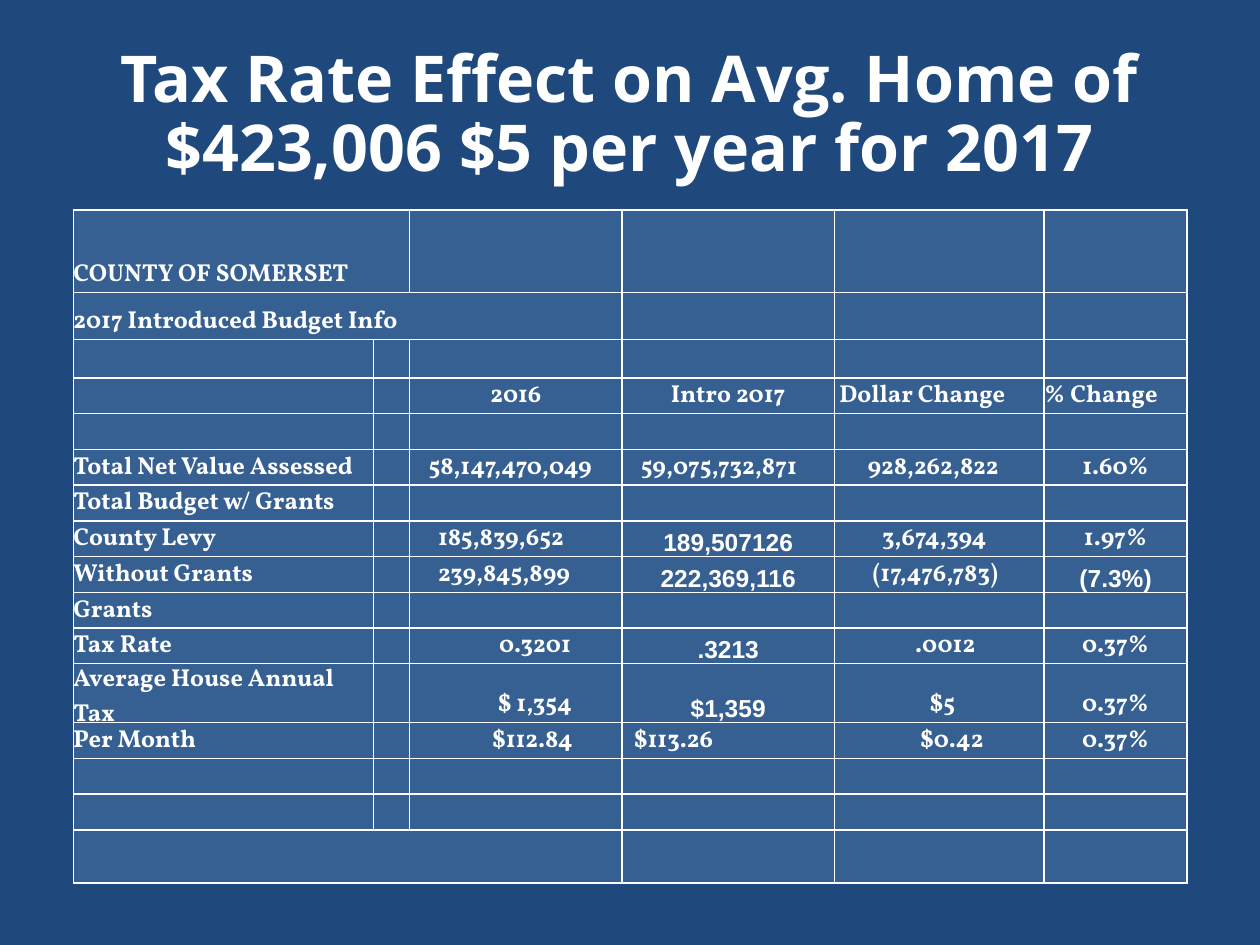
from collections import namedtuple

from lxml import etree
from pptx import Presentation
from pptx.dml.color import RGBColor
from pptx.enum.text import MSO_ANCHOR, PP_ALIGN
from pptx.oxml.ns import qn
from pptx.util import Cm, Pt

LEFT, CENTER = PP_ALIGN.LEFT, PP_ALIGN.CENTER
MIDDLE, BOTTOM = MSO_ANCHOR.MIDDLE, MSO_ANCHOR.BOTTOM

COLORS = {"background": "1F497D", "cell": "376092", "text": "FFFFFF", "border": "FFFFFF"}
TITLE_FONT, TABLE_FONT, UPDATE_FONT = "Open Sans", "Vollkorn", "Arial"
TITLE_SIZE, TABLE_SIZE = Pt(36.9), Pt(14)
BORDER_WIDTH = Pt(1)

TITLE = "Tax Rate Effect on Avg. Home of $423,006 $5 per year for 2017"

Entry = namedtuple("Entry", "text align indent font", defaults=(LEFT, 0, TABLE_FONT))


def centered(text, indent=0):
    return Entry(text, CENTER, indent)


def updated(text):
    """A figure revised after the first draft, set in the second typeface."""
    return Entry(text, CENTER, 0, UPDATE_FONT)


EMPTY = Entry("")
BLANK_ROW = [EMPTY] * 5

# Label, 2016, 2017, dollar change, percent change; the narrow second column stays empty.
ROWS = [
    [Entry("COUNTY OF SOMERSET")] + [EMPTY] * 4,
    [Entry("2017 Introduced Budget Info")] + [EMPTY] * 4,
    BLANK_ROW,
    [EMPTY, centered("2016"), centered("Intro 2017"), Entry("Dollar Change", LEFT, 0.1), Entry("% Change")],
    BLANK_ROW,
    [Entry("Total Net Value Assessed"), Entry("58,147,470,049", LEFT, 0.38),
     Entry("59,075,732,871", LEFT, 0.38), Entry("928,262,822", LEFT, 0.67), centered("1.60%")],
    [Entry("Total Budget w/ Grants")] + [EMPTY] * 4,
    [Entry("County Levy"), Entry("185,839,652", LEFT, 0.57), updated("189,507126"),
     Entry("3,674,394", LEFT, 0.96), centered("1.97%")],
    [Entry("Without Grants"), Entry("239,845,899", LEFT, 0.57), updated("222,369,116"),
     Entry("(17,476,783)", LEFT, 0.77), updated("(7.3%)")],
    [Entry("Grants")] + [EMPTY] * 4,
    [Entry("Tax Rate"), centered("0.3201", 0.77), updated(".3213"),
     Entry(".0012", LEFT, 1.63), centered("0.37%")],
    [Entry("Average House Annual Tax"), centered("$ 1,354", 0.77), updated("$1,359"),
     Entry("$5", LEFT, 1.92), centered("0.37%")],
    [Entry("Per Month"), centered("$112.84", 0.67), Entry("$113.26", LEFT, 0.24),
     Entry("$0.42", LEFT, 1.73), centered("0.37%")],
    BLANK_ROW,
    BLANK_ROW,
    BLANK_ROW,
]
COLUMN_WIDTHS = [6.05, 0.73, 4.28, 4.28, 4.23, 2.88]
ROW_HEIGHTS = [1.67, 0.94, 0.78] + [0.72] * 12 + [1.07]
LAST_MERGED_COLUMN = {0: 1, 1: 2, 15: 2}


def color(name):
    return RGBColor.from_string(COLORS[name])


def add_run(paragraph, text, font, size):
    run = paragraph.add_run()
    run.text = text
    run.font.name = font
    run.font.size = size
    run.font.bold = True
    run.font.color.rgb = color("text")


def add_borders(cell):
    properties = cell._tc.get_or_add_tcPr()
    for position, side in enumerate(("lnL", "lnR", "lnT", "lnB")):
        line = etree.Element(qn(f"a:{side}"), w=str(int(BORDER_WIDTH)))
        fill = etree.SubElement(line, qn("a:solidFill"))
        etree.SubElement(fill, qn("a:srgbClr"), val=COLORS["border"])
        properties.insert(position, line)


def format_cell(cell, entry):
    cell.margin_left = cell.margin_right = cell.margin_top = cell.margin_bottom = 0
    cell.vertical_anchor = BOTTOM
    cell.fill.solid()
    cell.fill.fore_color.rgb = color("cell")
    add_borders(cell)
    paragraph = cell.text_frame.paragraphs[0]
    paragraph.alignment = entry.align
    if entry.indent:
        paragraph._p.get_or_add_pPr().set("marL", str(int(Cm(entry.indent))))
    if entry.text:
        add_run(paragraph, entry.text, entry.font, TABLE_SIZE)
    else:
        # Keeps an empty row from growing to the default text size.
        etree.SubElement(paragraph._p, qn("a:endParaRPr"), sz=str(int(TABLE_SIZE.pt * 100)))


def add_title(slide):
    box = slide.shapes.add_textbox(Cm(1.27), Cm(0.76), Cm(22.86), Cm(3.18))
    box.text_frame.word_wrap = True
    box.text_frame.vertical_anchor = MIDDLE
    paragraph = box.text_frame.paragraphs[0]
    paragraph.alignment = CENTER
    paragraph.line_spacing = 0.89
    add_run(paragraph, TITLE, TITLE_FONT, TITLE_SIZE)


def add_budget_table(slide):
    table = slide.shapes.add_table(
        len(ROWS), len(COLUMN_WIDTHS), Cm(1.48), Cm(4.23),
        Cm(sum(COLUMN_WIDTHS)), Cm(sum(ROW_HEIGHTS))).table
    table.first_row = table.horz_banding = False
    for column, width in zip(table.columns, COLUMN_WIDTHS):
        column.width = Cm(width)
    for row_index, (entries, height) in enumerate(zip(ROWS, ROW_HEIGHTS)):
        table.rows[row_index].height = Cm(height)
        label, *figures = entries
        for column_index, entry in enumerate([label, EMPTY, *figures]):
            format_cell(table.cell(row_index, column_index), entry)
    for row_index, last_column in LAST_MERGED_COLUMN.items():
        table.cell(row_index, 0).merge(table.cell(row_index, last_column))


def main():
    presentation = Presentation()
    presentation.slide_width, presentation.slide_height = Cm(25.4), Cm(19.05)
    slide = presentation.slides.add_slide(presentation.slide_layouts[6])
    slide.background.fill.solid()
    slide.background.fill.fore_color.rgb = color("background")
    add_title(slide)
    add_budget_table(slide)
    presentation.save("out.pptx")


if __name__ == "__main__":
    main()
